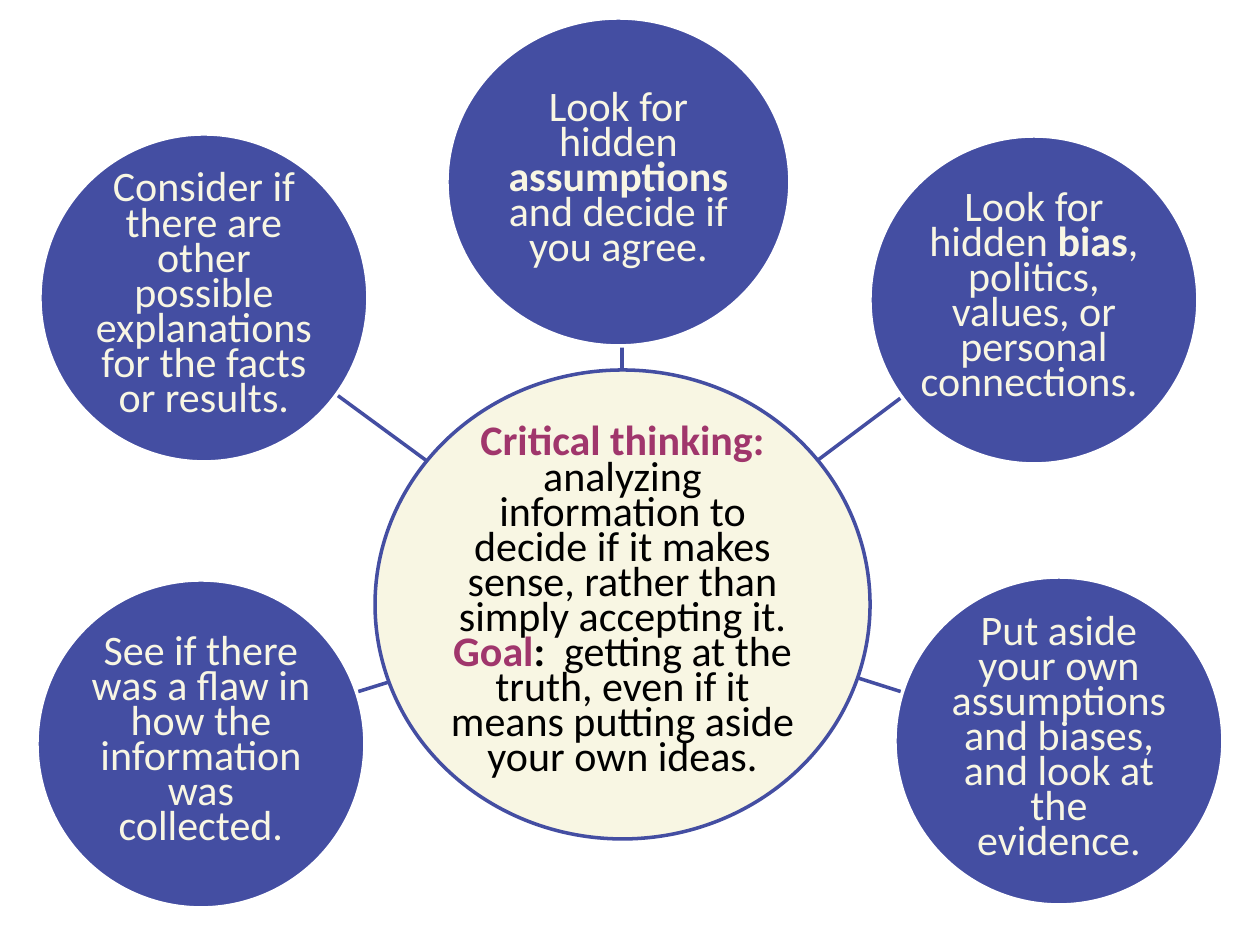
import pptx
import pptx.dml.color
import pptx.enum.shapes
import pptx.enum.text
import pptx.oxml.ns
import pptx.util
import lxml.etree

EMU_PER_PX = 914400 / 126
BLUE = pptx.dml.color.RGBColor(0x44, 0x4E, 0xA2)
CREAM = pptx.dml.color.RGBColor(0xF8, 0xF6, 0xE3)
PLUM = pptx.dml.color.RGBColor(0xA0, 0x36, 0x6C)
BLACK = pptx.dml.color.RGBColor(0, 0, 0)
WHITE = pptx.dml.color.RGBColor(0xFF, 0xFF, 0xFF)

DEFINITION = [
    ("Critical thinking: ", True, PLUM),
    ("analyzing information to decide if it makes sense, "
     "rather than simply accepting it. ", False, BLACK),
    ("Goal", True, PLUM),
    (": ", True, BLACK),
    (" getting at the truth, even if it means putting aside your own ideas.",
     False, BLACK),
]

# Each step: circle box, spoke from the hub to the circle, (text, bold) runs
STEPS = [
    ((447, 18, 343, 328), (622, 370, 622, 346),
     [("Look for hidden ", False), ("assumptions", True),
      (" and decide if you agree.", False)]),
    ((870, 136, 328, 328), (818, 460, 902, 397),
     [("Look for hidden ", False), ("bias", True),
      (", politics, values, or personal connections. ", False)]),
    ((895, 577, 328, 328), (858, 678, 902, 692),
     [("Put aside your own assumptions and biases, "
       "and look at the evidence.", False)]),
    ((37, 580, 328, 328), (389, 682, 357, 692),
     [("See if there was a flaw in how the information was collected.",
       False)]),
    ((40, 134, 328, 328), (427, 461, 337, 395),
     [("Consider if there are other possible explanations "
       "for the facts or results.", False)]),
]


def px(length):
    return pptx.util.Emu(round(length * EMU_PER_PX))


def add_circle(slide, box, fill, outline, runs, space_after=0):
    """Add an oval with one centred paragraph of (text, bold, colour) runs."""
    circle = slide.shapes.add_shape(
        pptx.enum.shapes.MSO_SHAPE.OVAL, *map(px, box))
    circle.shadow.inherit = False
    circle.fill.solid()
    circle.fill.fore_color.rgb = fill
    circle.line.color.rgb = outline
    circle.line.width = pptx.util.Pt(2)

    frame = circle.text_frame
    frame.word_wrap = True
    frame.vertical_anchor = pptx.enum.text.MSO_ANCHOR.MIDDLE
    frame.margin_left = frame.margin_right = px(2)
    frame.margin_top = frame.margin_bottom = px(2)
    paragraph = frame.paragraphs[0]
    paragraph.alignment = pptx.enum.text.PP_ALIGN.CENTER
    paragraph.line_spacing = pptx.util.Pt(20)
    paragraph.space_after = pptx.util.Pt(space_after)
    for text, bold, color in runs:
        run = paragraph.add_run()
        run.text = text
        run.font.name = "Calibri"
        run.font.size = pptx.util.Pt(24)
        run.font.bold = bold
        run.font.color.rgb = color


def add_spoke(slide, ends):
    spoke = slide.shapes.add_connector(
        pptx.enum.shapes.MSO_CONNECTOR.STRAIGHT, *map(px, ends))
    spoke.line.color.rgb = BLUE
    spoke.line.width = pptx.util.Pt(2)
    lxml.etree.SubElement(
        spoke._element.spPr, pptx.oxml.ns.qn("a:effectLst"))


def main():
    deck = pptx.Presentation()
    deck.slide_width, deck.slide_height = px(1260), px(945)
    slide = deck.slides.add_slide(deck.slide_layouts[6])

    add_circle(slide, (375, 370, 495, 469), CREAM, BLUE, DEFINITION,
               space_after=8)
    for box, spoke_ends, runs in STEPS:
        add_spoke(slide, spoke_ends)
        add_circle(slide, box, BLUE, WHITE,
                   [(text, bold, CREAM) for text, bold in runs])

    deck.save("out.pptx")


if __name__ == "__main__":
    main()
